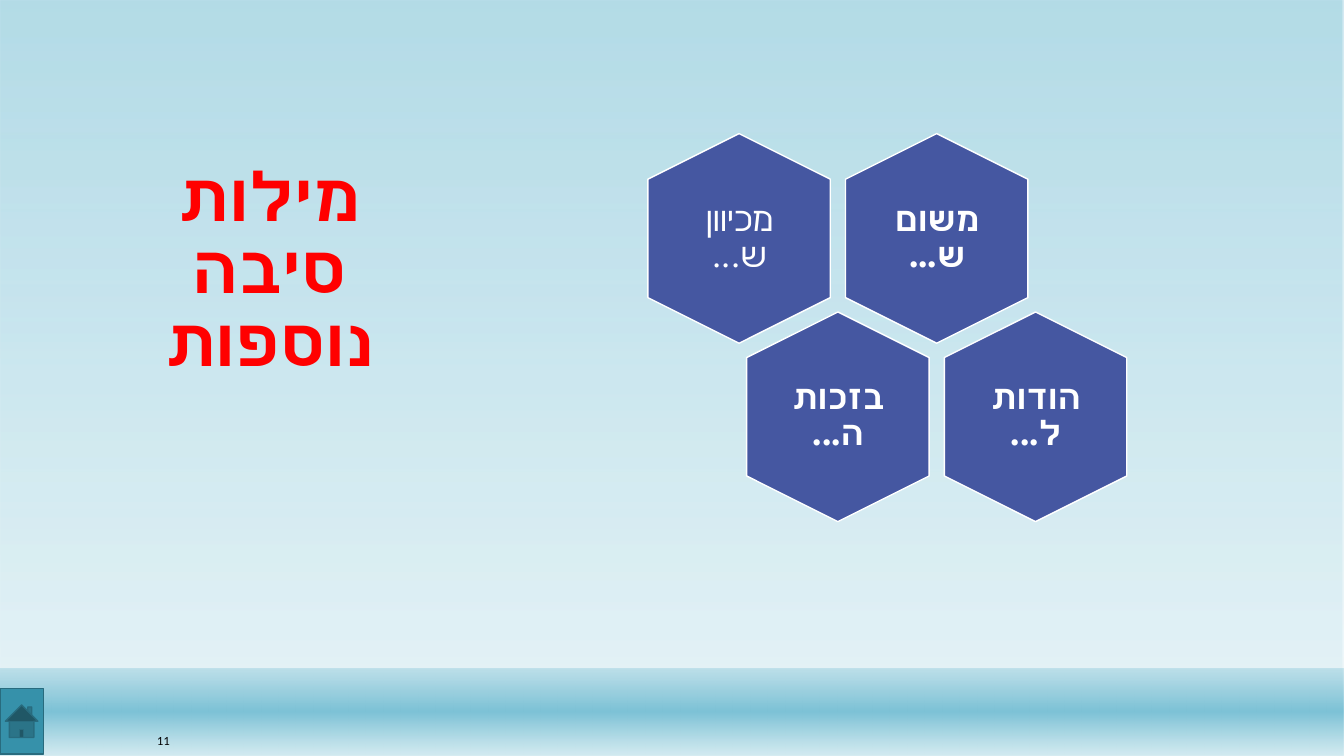
from lxml import etree
from pptx import Presentation
from pptx import util as u
from pptx.dml.color import RGBColor
from pptx.enum import shapes, text
from pptx.oxml.ns import qn

PX = 9144  # 100 px to the inch
COLORS = {
    "sky": "7DC2D6",
    "mist": "D4EBF1",
    "title": "FF0000",
    "hexagon": "4557A1",
    "white": "FFFFFF",
    "number": "000000",
    "home": "3691AA",
    "home_line": "286B7E",
}
TITLE_FONT = "Lato"
LABEL_FONT = "TeX Gyre Schola"


def color(name):
    return RGBColor.from_string(COLORS[name])


def box(left, top, width, height):
    return [u.Emu(value * PX) for value in (left, top, width, height)]


def add_filled(slide, kind, place, fill, line):
    shape = slide.shapes.add_shape(kind, *box(*place))
    shape.shadow.inherit = False
    shape.fill.solid()
    shape.fill.fore_color.rgb = color(fill)
    shape.line.color.rgb = color(line)
    shape.line.width = u.Pt(1)
    return shape


def add_gradient_band(slide, place, stops):
    """Draw a borderless band; stops are (position, colour, opacity) in percent, top to bottom."""
    shape = slide.shapes.add_shape(shapes.MSO_SHAPE.RECTANGLE, *box(*place))
    shape.shadow.inherit = False
    shape.line.fill.background()
    shape.fill.gradient()
    shape.fill.gradient_angle = 270
    stop_list = shape._element.spPr.find(qn("a:gradFill")).find(qn("a:gsLst"))
    for old_stop in list(stop_list):
        stop_list.remove(old_stop)
    for position, name, opacity in stops:
        stop = etree.SubElement(stop_list, qn("a:gs"), pos=str(position * 1000))
        rgb = etree.SubElement(stop, qn("a:srgbClr"), val=COLORS[name])
        etree.SubElement(rgb, qn("a:alpha"), val=str(opacity * 1000))


def write_rtl(shape, words, size, font, fill, bold=False, align=text.PP_ALIGN.CENTER,
              anchor=text.MSO_ANCHOR.MIDDLE, spacing=0.9, inset=(10, 5)):
    frame = shape.text_frame
    frame.text = words
    frame.word_wrap = True
    frame.auto_size = text.MSO_AUTO_SIZE.NONE
    frame.vertical_anchor = anchor
    frame.margin_left = frame.margin_right = u.Emu(inset[0] * PX)
    frame.margin_top = frame.margin_bottom = u.Emu(inset[1] * PX)
    paragraph = frame.paragraphs[0]
    paragraph.alignment = align
    paragraph.line_spacing = spacing
    paragraph._p.get_or_add_pPr().set("rtl", "1")
    run = paragraph.runs[0]
    run.font.size = u.Pt(size)
    run.font.bold = bold
    run.font.name = font
    run.font.color.rgb = color(fill)
    etree.SubElement(run._r.get_or_add_rPr(), qn("a:cs"), typeface=font)


def add_title(slide, words):
    title = slide.shapes.title
    title.left, title.top, title.width, title.height = box(83, 83, 369, 300)
    write_rtl(title, words, 48, TITLE_FONT, "title", bold=True,
              anchor=text.MSO_ANCHOR.BOTTOM, inset=(20, 5))
    slide.shapes._spTree.append(title._element)  # in front of the bands


def add_hexagon(slide, column, row, words, bold, inset):
    left = 629 + 196 * column + 98 * row
    top = 146 + 177 * row
    hexagon = add_filled(slide, shapes.MSO_SHAPE.HEXAGON, (left, top, 208, 181),
                         "hexagon", "white")
    hexagon.rotation = 90
    hexagon.adjustments[0] = 0.25
    label = slide.shapes.add_textbox(*box(left + 42, top + 19, 125, 143))
    write_rtl(label, words, 24, LABEL_FONT, "white", bold, inset=(inset, inset))


def main():
    presentation = Presentation()
    presentation.slide_width = u.Emu(1333 * PX)
    presentation.slide_height = u.Emu(750 * PX)
    slide = presentation.slides.add_slide(presentation.slide_layouts[5])

    add_gradient_band(slide, (0, 0, 1333, 750), [(0, "sky", 58), (88, "mist", 65)])
    add_gradient_band(slide, (0, 663, 1333, 87),
                      [(1, "sky", 38), (49, "sky", 100), (100, "mist", 89)])
    add_title(slide, "מילות סיבה נוספות")

    for column, row, words, bold, inset in (
        (1, 0, "משום ש...", True, 10),
        (0, 0, "מכיוון ש...", False, 0),
        (0, 1, "בזכות ה...", True, 10),
        (1, 1, "הודות ל...", True, 0),
    ):
        add_hexagon(slide, column, row, words, bold, inset)

    number = slide.shapes.add_textbox(*box(146, 722, 70, 26))
    write_rtl(number, "11", 8, TITLE_FONT, "number", align=text.PP_ALIGN.LEFT, spacing=1.0)
    add_filled(slide, shapes.MSO_SHAPE.ACTION_BUTTON_HOME, (0, 683, 43, 65),
               "home", "home_line")

    presentation.save("out.pptx")


if __name__ == "__main__":
    main()
